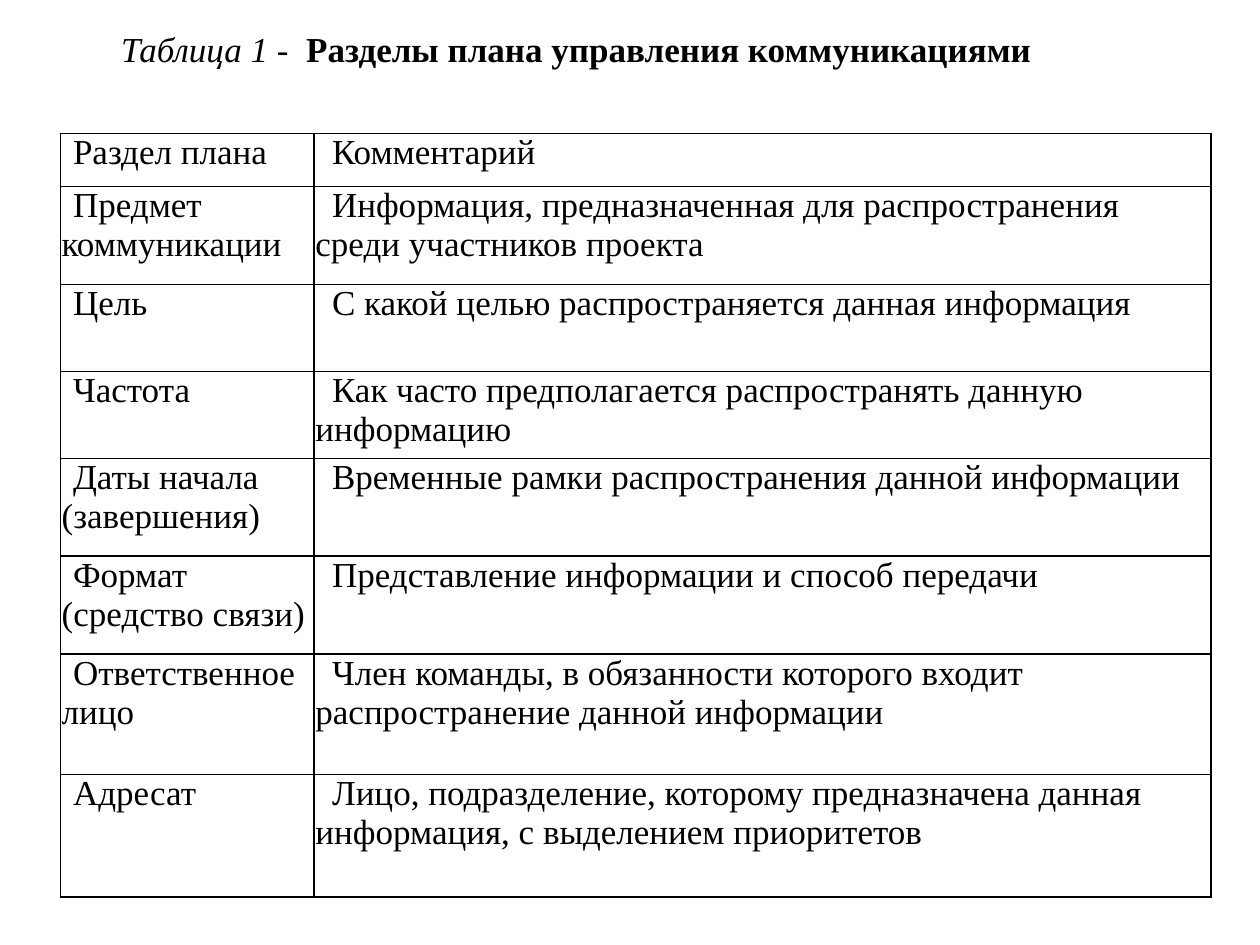
from lxml import etree
from pptx import Presentation
from pptx.dml.color import RGBColor
from pptx.enum.text import MSO_ANCHOR, MSO_AUTO_SIZE, PP_ALIGN
from pptx.oxml.ns import qn
from pptx.util import Pt

LEFT, TOP, NO_FIT = PP_ALIGN.LEFT, MSO_ANCHOR.TOP, MSO_AUTO_SIZE.NONE
BLACK, WHITE = "000000", "FFFFFF"
TITLE = [("Таблица 1 -  ", {"italic": True}),
         ("Разделы плана управления коммуникациями", {"bold": True})]
COLS = [145, 512.5]
INDENTS = [6.5, 9.5]
ROWS = [
    (30.25, "Раздел плана", "Комментарий"),
    (56, "Предмет коммуникации", "Информация, предназначенная для распространения среди участников проекта"),
    (49.7, "Цель", "С какой целью распространяется данная информация"),
    (49.7, "Частота", "Как часто предполагается распространять данную информацию"),
    (56, "Даты начала (завершения)", "Временные рамки распространения данной информации"),
    (56, "Формат (средство связи)", "Представление информации и способ передачи"),
    (68.75, "Ответственное лицо", "Член команды, в обязанности которого входит распространение данной информации"),
    (70, "Адресат", "Лицо, подразделение, которому предназначена данная информация, с выделением приоритетов"),
]


def color(target, value):
    target.rgb = RGBColor.from_string(value)


def add_text(p, text, indent, **extra):
    p.alignment = LEFT
    p._p.get_or_add_pPr().set("indent", str(Pt(indent)))
    r = p.add_run()
    r.text = text
    for name, value in {"name": "Times New Roman", "size": Pt(20), **extra}.items():
        setattr(r.font, name, value)
    color(r.font.color, BLACK)


prs = Presentation()
prs.slide_width, prs.slide_height = Pt(720), Pt(540)
s = prs.slides.add_slide(prs.slide_layouts[5])

sp = s.shapes.title
sp.left, sp.top, sp.width, sp.height = Pt(26.5), Pt(0), Pt(643), Pt(39)
tf = sp.text_frame
for name, value in {"auto_size": NO_FIT, "word_wrap": True, "vertical_anchor": TOP}.items():
    setattr(tf, name, value)
p = tf.paragraphs[0]
p.line_spacing = 1.5
for text, style in TITLE:
    add_text(p, text, 35.5, **style)

height = sum(row[0] for row in ROWS)
table = s.shapes.add_table(len(ROWS), len(COLS), Pt(34.5), Pt(76.25),
                           Pt(sum(COLS)), Pt(height)).table
table.first_row = table.horz_banding = False
for col, width in zip(table.columns, COLS):
    col.width = Pt(width)

cell_format = {"margin_left": Pt(0.75), "margin_right": Pt(0.75), "margin_top": 0,
               "margin_bottom": 0, "vertical_anchor": TOP}
for i, (row_height, *texts) in enumerate(ROWS):
    table.rows[i].height = Pt(row_height)
    for j, text in enumerate(texts):
        cell = table.cell(i, j)
        for name, value in cell_format.items():
            setattr(cell, name, value)
        tcPr = cell._tc.get_or_add_tcPr()
        for side in ("a:lnL", "a:lnR", "a:lnT", "a:lnB"):
            ln = etree.SubElement(tcPr, qn(side), w=str(Pt(1)))
            fill = etree.SubElement(ln, qn("a:solidFill"))
            etree.SubElement(fill, qn("a:srgbClr"), val=BLACK)
        cell.fill.solid()
        color(cell.fill.fore_color, WHITE)
        add_text(cell.text_frame.paragraphs[0], text, INDENTS[j])

prs.save("out.pptx")
